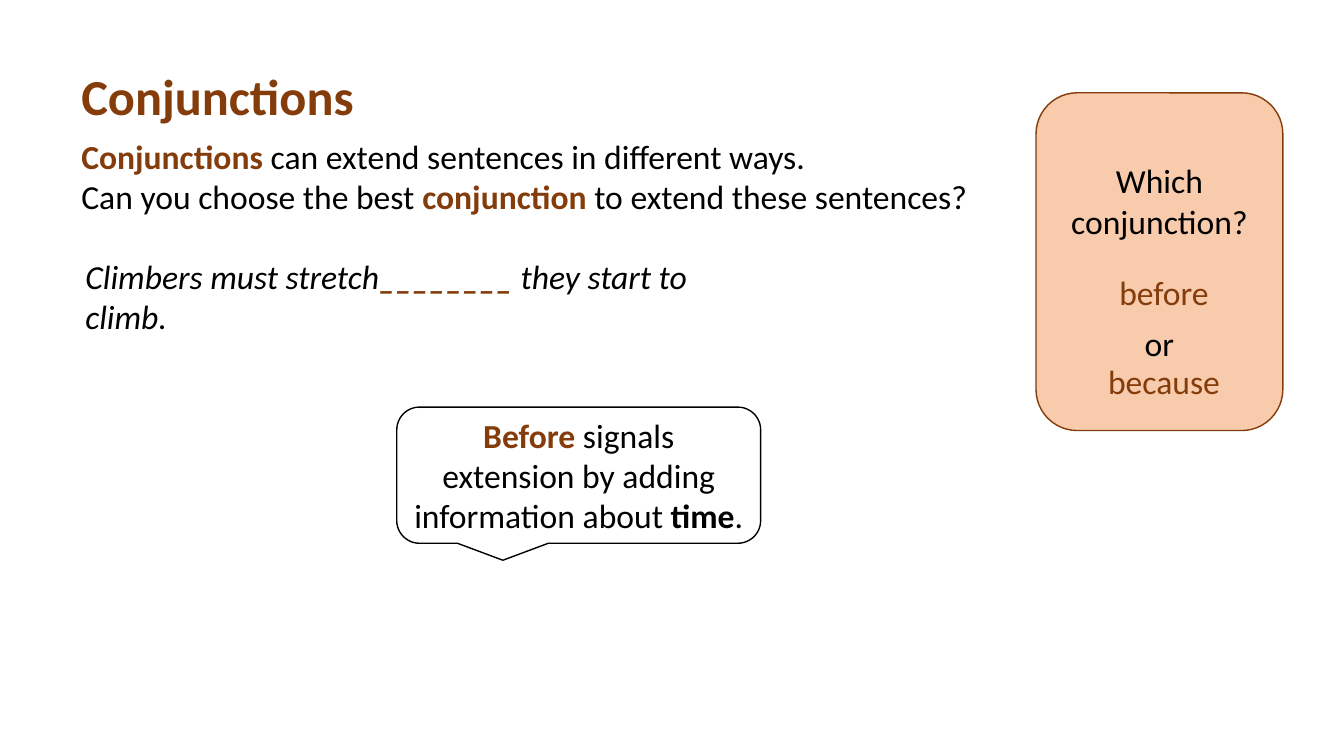
"""Build a slide on choosing the right conjunction."""
from dataclasses import dataclass

from pptx import Presentation
from pptx.dml.color import RGBColor
from pptx.enum.shapes import MSO_SHAPE
from pptx.enum.text import MSO_ANCHOR, PP_ALIGN
from pptx.shapes.autoshape import Shape
from pptx.slide import Slide
from pptx.util import Cm, Pt


@dataclass(frozen=True)
class Theme:
    """Colours, font and type sizes of the slide."""
    ink: RGBColor = RGBColor(0x00, 0x00, 0x00)
    accent: RGBColor = RGBColor(0x84, 0x3C, 0x0B)
    card: RGBColor = RGBColor(0xF8, 0xCB, 0xAD)
    font: str = "Calibri"
    title: int = 36
    body: int = 24
    card_gap: float = 58.6
    outline: int = 1


THEME = Theme()


@dataclass(frozen=True)
class Span:
    """A stretch of text in one style."""
    text: str
    color: RGBColor = THEME.ink
    bold: bool = False
    italic: bool = False


@dataclass(frozen=True)
class Area:
    """A rectangle on the slide in centimetres."""
    left: float
    top: float
    width: float
    height: float

    def lengths(self) -> tuple[Cm, Cm, Cm, Cm]:
        """Return left, top, width and height as lengths."""
        return Cm(self.left), Cm(self.top), Cm(self.width), Cm(self.height)


Lines = list[list[Span]]


@dataclass(frozen=True)
class TextBlock:
    """A plain text box."""
    area: Area
    lines: Lines
    size: int = THEME.body
    align: PP_ALIGN = PP_ALIGN.LEFT
    wrap: bool = True


@dataclass(frozen=True)
class Panel:
    """An outlined shape with centred text."""
    kind: MSO_SHAPE
    area: Area
    lines: Lines
    line_color: RGBColor
    fill: RGBColor | None = None
    gap: float = 0


def key(text: str) -> Span:
    """Return a bold span in the accent colour."""
    return Span(text, THEME.accent, bold=True)


def option(text: str, area: Area) -> TextBlock:
    """Return one of the conjunctions on offer."""
    return TextBlock(area, [[Span(text, THEME.accent)]], align=PP_ALIGN.CENTER, wrap=False)


TEXT_BLOCKS = [
    TextBlock(Area(1.8, 1.52, 29.36, 1.8), [[key("Conjunctions")]], THEME.title),
    TextBlock(Area(1.8, 3.3, 28.5, 2.31), [
        [key("Conjunctions"), Span(" can extend sentences in different ways.")],
        [Span("Can you choose the best "), key("conjunction"),
         Span(" to extend these sentences?")],
    ]),
    TextBlock(Area(1.9, 6.32, 17.7, 1.27), [[
        Span("Climbers must stretch", italic=True),
        Span("________ ", THEME.accent, bold=True, italic=True),
        Span("they start to climb.", italic=True),
    ]]),
    option("because", Area(27.66, 8.97, 3.35, 1.27)),
    option("before", Area(27.94, 6.73, 2.79, 1.27)),
]

PANELS = [
    Panel(MSO_SHAPE.ROUNDED_RECTANGLE, Area(26.11, 2.34, 6.22, 8.51),
          [[Span("Which conjunction?")], [Span("or")]],
          THEME.accent, THEME.card, THEME.card_gap),
    Panel(MSO_SHAPE.ROUNDED_RECTANGULAR_CALLOUT, Area(10, 10.26, 9.17, 3.43),
          [[key("Before"), Span(" signals extension by adding information about "),
            Span("time", bold=True), Span(".")]],
          THEME.ink),
]


def write(shape: Shape, lines: Lines, size: int, align: PP_ALIGN, gap: float = 0) -> None:
    """Fill a shape with paragraphs, run by run."""
    frame = shape.text_frame
    for index, line in enumerate(lines):
        para = frame.add_paragraph() if index else frame.paragraphs[0]
        para.alignment = align
        if index and gap:
            para.space_before = Pt(gap)
        for span in line:
            run = para.add_run()
            run.text = span.text
            run.font.name = THEME.font
            run.font.size = Pt(size)
            run.font.bold = span.bold
            run.font.italic = span.italic
            run.font.color.rgb = span.color


def draw_text(page: Slide, block: TextBlock) -> None:
    """Draw a text box."""
    box = page.shapes.add_textbox(*block.area.lengths())
    box.text_frame.word_wrap = block.wrap
    write(box, block.lines, block.size, block.align)


def draw_panel(page: Slide, panel: Panel) -> None:
    """Draw an outlined shape with its text."""
    shape = page.shapes.add_shape(panel.kind, *panel.area.lengths())
    shape.shadow.inherit = False
    if panel.fill is None:
        shape.fill.background()
    else:
        shape.fill.solid()
        shape.fill.fore_color.rgb = panel.fill
    shape.line.color.rgb = panel.line_color
    shape.line.width = Pt(THEME.outline)
    shape.text_frame.word_wrap = True
    shape.text_frame.vertical_anchor = MSO_ANCHOR.MIDDLE
    write(shape, panel.lines, THEME.body, PP_ALIGN.CENTER, panel.gap)


def main() -> None:
    """Build and save the deck."""
    deck = Presentation()
    deck.slide_width, deck.slide_height = Cm(33.87), Cm(19.05)
    page = deck.slides.add_slide(deck.slide_layouts[6])
    for panel in PANELS:
        draw_panel(page, panel)
    for block in TEXT_BLOCKS:
        draw_text(page, block)
    deck.save("out.pptx")


if __name__ == "__main__":
    main()
